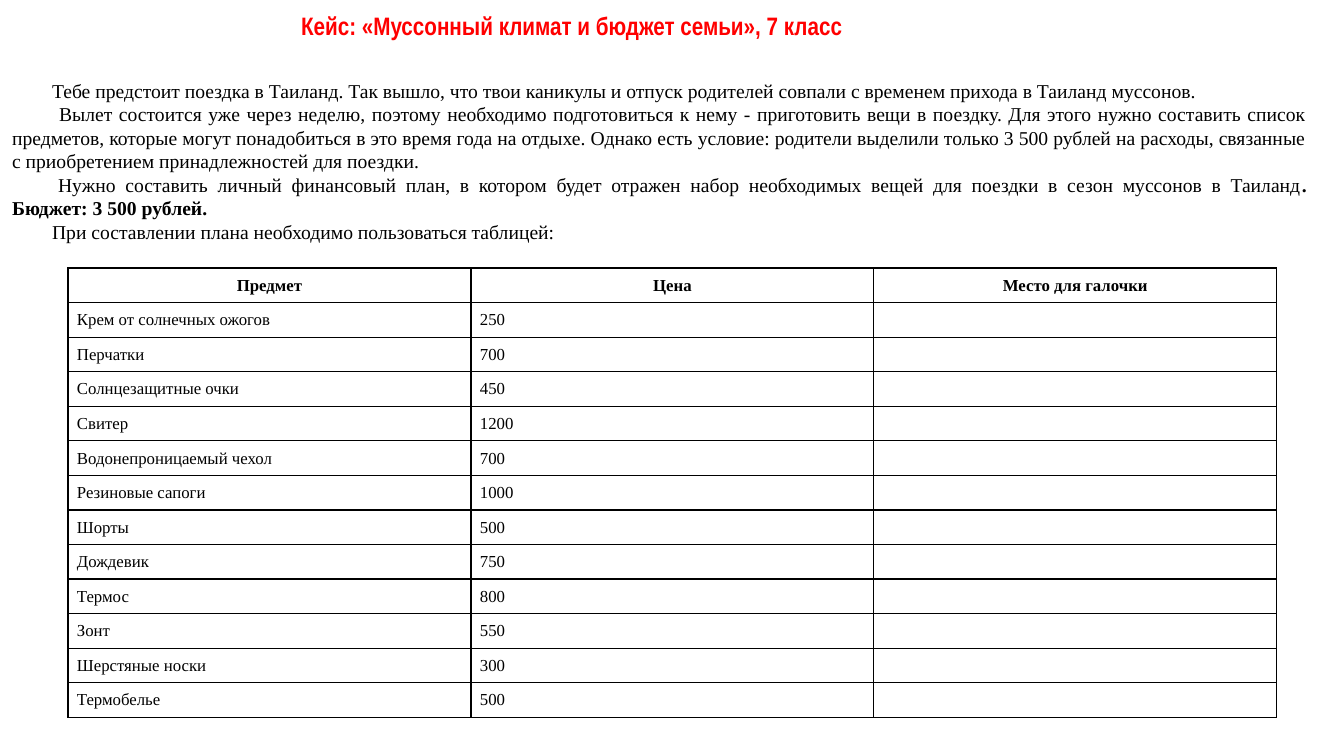
from dataclasses import dataclass

from lxml.etree import SubElement
from pptx import Presentation
from pptx.dml.color import RGBColor
from pptx.enum.text import MSO_ANCHOR as Anchor, MSO_AUTO_SIZE as AutoSize, PP_ALIGN as Align
from pptx.oxml.ns import qn
from pptx.util import Pt

EMU_PER_PX = 12192000 / 1344


@dataclass(frozen=True)
class Theme:
    """Colours, fonts and type sizes of the slide."""
    ink: str = "000000"
    accent: str = "FF0000"
    serif: str = "Times New Roman"
    narrow: str = "Arial Narrow"
    title_size: int = 18
    body_size: int = 14
    table_size: int = 12
    border: int = 1


THEME = Theme()
TITLE = "Кейс: «Муссонный климат и бюджет семьи», 7 класс"
STORY = [
    (40, ["Тебе предстоит поездка в Таиланд. Так вышло, что твои каникулы и отпуск родителей "
          "совпали с временем прихода в Таиланд муссонов."]),
    (47, ["Вылет состоится уже через неделю, поэтому необходимо подготовиться к нему - приготовить "
          "вещи в поездку. Для этого нужно составить список предметов, которые могут понадобиться "
          "в это время года на отдыхе. Однако есть условие: родители выделили только 3 500 рублей "
          "на расходы, связанные с приобретением принадлежностей для поездки."]),
    (46, ["Нужно составить личный финансовый план, в котором будет отражен набор необходимых вещей "
          "для поездки в сезон муссонов в Таиланд", ".\vБюджет: 3 500 рублей."]),
    (40, ["При составлении плана необходимо пользоваться таблицей:"]),
]
HEADINGS = ["Предмет", "Цена", "Место для галочки"]
PRICES = {
    "Крем от солнечных ожогов": 250,
    "Перчатки": 700,
    "Солнцезащитные очки": 450,
    "Свитер": 1200,
    "Водонепроницаемый чехол": 700,
    "Резиновые сапоги": 1000,
    "Шорты": 500,
    "Дождевик": 750,
    "Термос": 800,
    "Зонт": 550,
    "Шерстяные носки": 300,
    "Термобелье": 500,
}


def px(length):
    """Turn whole pixels into EMU."""
    return round(length * EMU_PER_PX)


def write(paragraph, text, *, size, font=THEME.serif, color=THEME.ink, bold=False):
    """Add text to a paragraph, starting a new line at each vertical tab."""
    for number, line in enumerate(text.split("\v")):
        if number:
            paragraph.add_line_break()
        run = paragraph.add_run()
        run.text = line
        run.font.size = Pt(size)
        run.font.name = font
        run.font.bold = bold
        run.font.color.rgb = RGBColor.from_string(color)


def place(placeholder, left, top, width, height, anchor):
    """Move a placeholder and return its text frame."""
    placeholder.left, placeholder.top = px(left), px(top)
    placeholder.width, placeholder.height = px(width), px(height)
    frame = placeholder.text_frame
    frame.word_wrap = True
    frame.auto_size = AutoSize.SHAPE_TO_FIT_TEXT
    frame.vertical_anchor = anchor
    return frame


def add_title(slide):
    """Fill the title placeholder."""
    heading = place(slide.shapes.title, 291, 5, 672, 40, Anchor.TOP).paragraphs[0]
    heading.alignment = Align.LEFT
    write(heading, TITLE, size=THEME.title_size, font=THEME.narrow,
          color=THEME.accent, bold=True)


def add_story(slide):
    """Fill the body placeholder with justified, indented paragraphs."""
    story = place(slide.placeholders[1], 2, 73, 1315, 176, Anchor.MIDDLE)
    for number, (indent, parts) in enumerate(STORY):
        paragraph = story.add_paragraph() if number else story.paragraphs[0]
        paragraph.alignment = Align.JUSTIFY
        paragraph.space_before = Pt(0)
        properties = paragraph._p.get_or_add_pPr()
        properties.set("marL", "0")
        properties.set("indent", str(px(indent)))
        SubElement(properties, qn("a:buNone"))
        for position, part in enumerate(parts):
            write(paragraph, part, size=THEME.body_size, bold=position > 0)


def draw_borders(cell):
    """Draw a solid line on all four sides of a cell."""
    properties = cell._tc.get_or_add_tcPr()
    for side in ("a:lnL", "a:lnR", "a:lnT", "a:lnB"):
        line = SubElement(properties, qn(side), w=str(Pt(THEME.border)))
        solid = SubElement(line, qn("a:solidFill"))
        SubElement(solid, qn("a:srgbClr"), val=THEME.ink)


def fill_cell(cell, text, heading):
    """Write one bordered, unfilled table cell."""
    cell.margin_left = cell.margin_right = px(9)
    cell.margin_top, cell.margin_bottom = px(7), px(6)
    draw_borders(cell)
    cell.fill.background()
    paragraph = cell.text_frame.paragraphs[0]
    paragraph.alignment = Align.CENTER if heading else Align.LEFT
    paragraph.line_spacing = 1.07
    paragraph.space_after = Pt(8)
    if text:
        write(paragraph, text, size=THEME.table_size, bold=heading)
    else:
        SubElement(paragraph._p, qn("a:endParaRPr"), sz=str(THEME.table_size * 100))


def add_price_table(slide):
    """Add the table of items, prices and tick places."""
    rows = [HEADINGS] + [[item, str(price), ""] for item, price in PRICES.items()]
    column_width, row_height = 403, 34
    table = slide.shapes.add_table(
        len(rows), len(HEADINGS), px(68), px(268),
        px(column_width * len(HEADINGS)), px(row_height * len(rows))).table
    table.first_row = table.horz_banding = False
    for column in table.columns:
        column.width = px(column_width)
    for number, (row, texts) in enumerate(zip(table.rows, rows)):
        row.height = px(row_height)
        for cell, text in zip(row.cells, texts):
            fill_cell(cell, text, heading=number == 0)


def main():
    """Build and save the slide."""
    deck = Presentation()
    deck.slide_width, deck.slide_height = px(1344), px(756)
    slide = deck.slides.add_slide(deck.slide_layouts[1])
    add_price_table(slide)
    add_story(slide)
    add_title(slide)
    deck.save("out.pptx")


if __name__ == "__main__":
    main()
